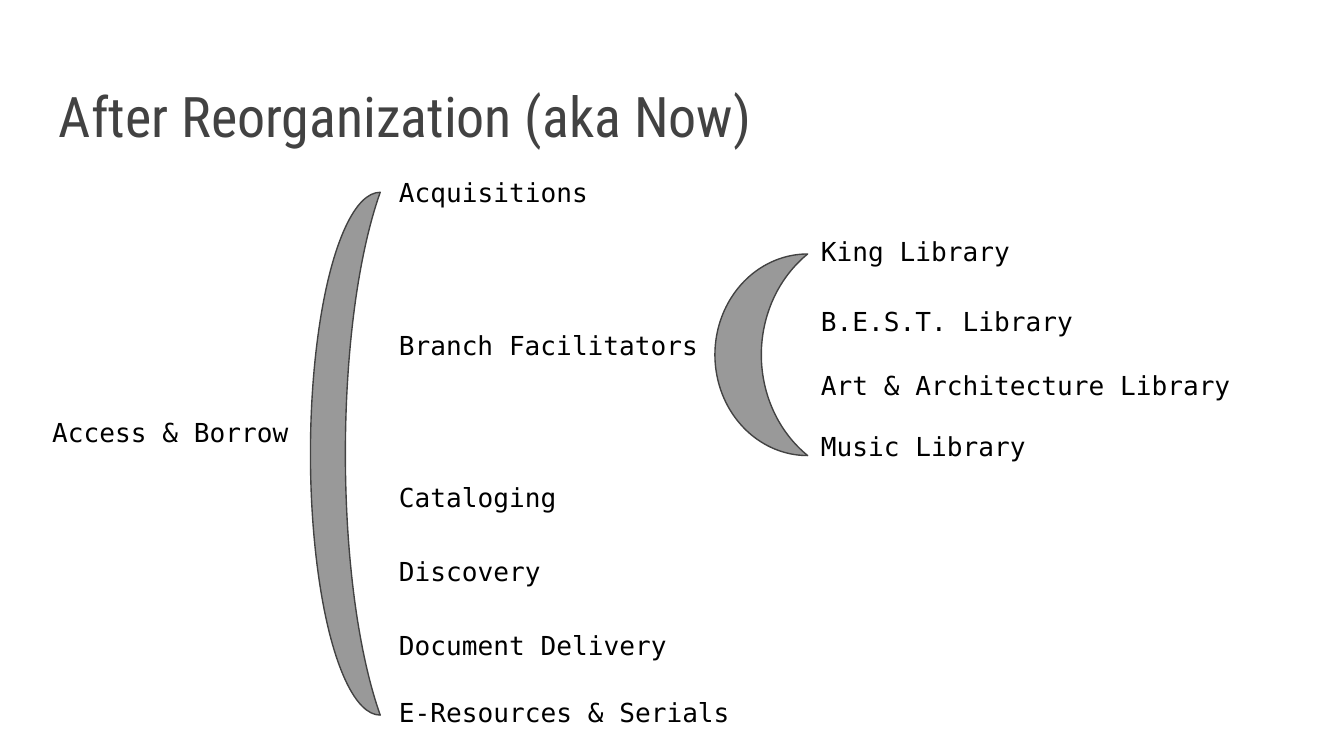
from dataclasses import dataclass

import pptx
import pptx.dml.color
import pptx.enum.shapes
import pptx.enum.text
import pptx.util

Pt = pptx.util.Pt
RGBColor = pptx.dml.color.RGBColor
MSO_ANCHOR = pptx.enum.text.MSO_ANCHOR

BLACK = RGBColor(0x00, 0x00, 0x00)
DARK = RGBColor(0x42, 0x42, 0x42)
GRAY = RGBColor(0x99, 0x99, 0x99)

LABEL_HEIGHT = 39.6
INSET = 7.2


@dataclass
class Label:
    text: str
    top: float
    width: float = 145.4


@dataclass
class Bracket:
    left: float
    top: float
    width: float
    height: float


# Each column of the chart: left edge and its labels
COLUMNS = {
    20.9: [Label("Access & Borrow", 216)],
    206.6: [
        Label("Acquisitions", 87.1),
        Label("Branch Facilitators", 169.2, 187.2),
        Label("Cataloging", 250.6),
        Label("Discovery", 290.2),
        Label("Document Delivery", 329.8, 169.2),
        Label("E-Resources & Serials", 365.8, 209.5),
    ],
    432.7: [
        Label("King Library", 118.8),
        Label("B.E.S.T. Library", 156.2, 172.8),
        Label("Art & Architecture Library", 190.8, 244.8),
        Label("Music Library", 223.2),
    ],
}

BRACKETS = [
    Bracket(383, 136.1, 49.7, 108),
    Bracket(166.3, 103, 37.4, 280.1),
]


def add_text(s, text: str, left: float, top: float, width: float, height: float, *,
             size: float = 14, font: str = "DejaVu Sans Mono",
             color: RGBColor = BLACK, anchor=MSO_ANCHOR.TOP) -> None:
    sp = s.shapes.add_textbox(Pt(left), Pt(top), Pt(width), Pt(height))
    tf = sp.text_frame
    tf.word_wrap = True
    tf.vertical_anchor = anchor
    tf.margin_left = tf.margin_right = tf.margin_top = tf.margin_bottom = Pt(INSET)
    r = tf.paragraphs[0].add_run()
    r.text = text
    r.font.size = Pt(size)
    r.font.name = font
    r.font.color.rgb = color


def add_bracket(s, b: Bracket) -> None:
    sp = s.shapes.add_shape(pptx.enum.shapes.MSO_SHAPE.MOON,
                            Pt(b.left), Pt(b.top), Pt(b.width), Pt(b.height))
    sp.shadow.inherit = False
    sp.fill.solid()
    sp.fill.fore_color.rgb = GRAY
    sp.line.color.rgb = DARK
    sp.line.width = Pt(0.75)


def main() -> None:
    prs = pptx.Presentation()
    prs.slide_width, prs.slide_height = Pt(720), Pt(405)
    s = prs.slides.add_slide(prs.slide_layouts[6])

    # Title
    add_text(s, "After Reorganization (aka Now)", 24.5, 29.5, 671, 57.6,
             size=30, font="Roboto Condensed", color=DARK, anchor=MSO_ANCHOR.BOTTOM)

    # Department, units and libraries
    for left, labels in COLUMNS.items():
        for label in labels:
            add_text(s, label.text, left, label.top, label.width, LABEL_HEIGHT)

    # Crescents that open onto the next column
    for bracket in BRACKETS:
        add_bracket(s, bracket)

    prs.save("out.pptx")


if __name__ == "__main__":
    main()
